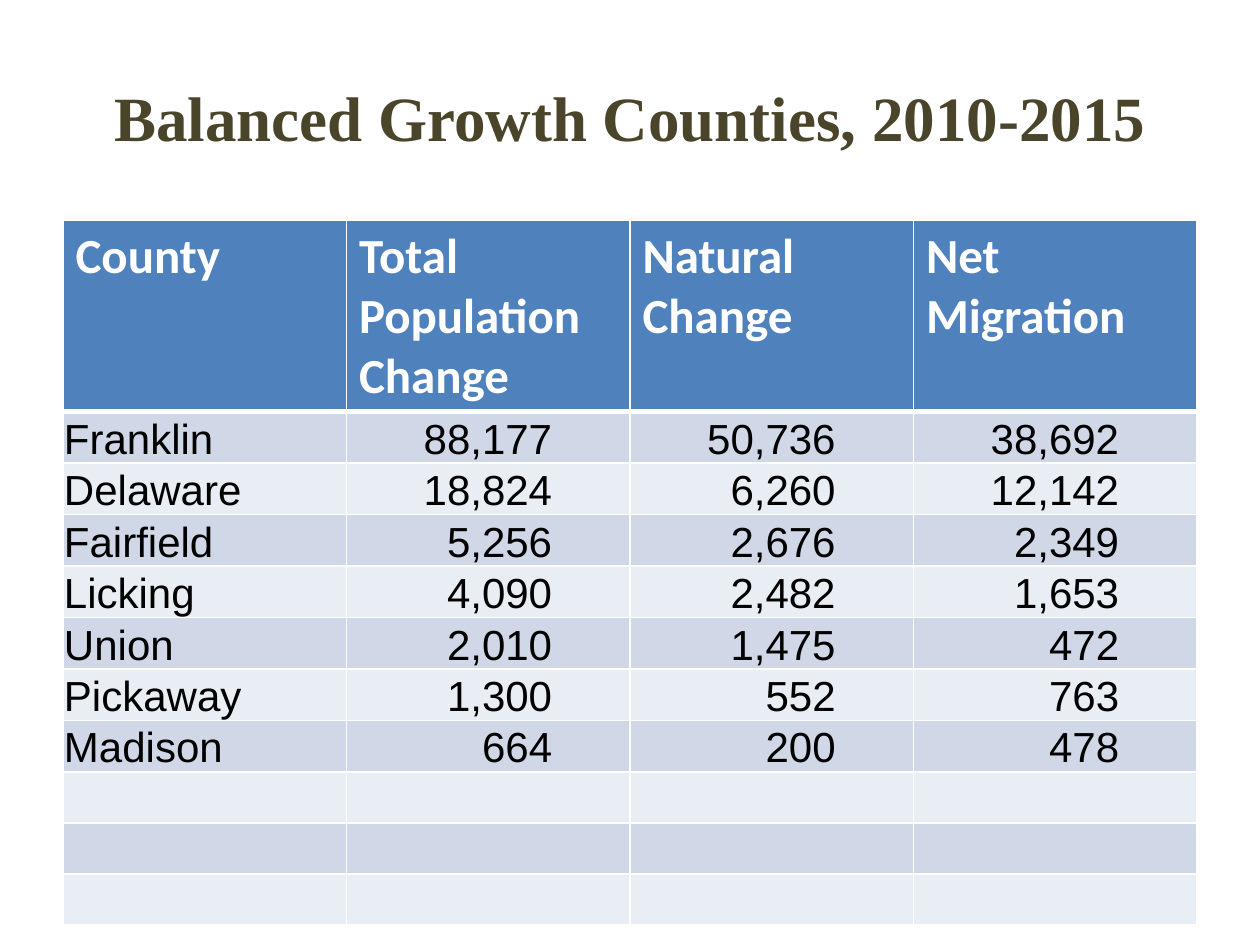
from dataclasses import dataclass

from lxml.etree import SubElement
from pptx import Presentation
from pptx.dml.color import RGBColor
from pptx.enum.text import MSO_ANCHOR as Anchor, PP_ALIGN as Align
from pptx.oxml.ns import qn
from pptx.slide import Slide
from pptx.util import Cm, Pt

WHITE = RGBColor(0xFF, 0xFF, 0xFF)
BLACK = RGBColor(0x00, 0x00, 0x00)
OLIVE = RGBColor(0x4A, 0x45, 0x2A)
BLUE = RGBColor(0x4F, 0x81, 0xBD)
BANDS = (RGBColor(0xD0, 0xD8, 0xE8), RGBColor(0xE9, 0xED, 0xF4))

HEADINGS = ("County", "Total Population Change", "Natural Change", "Net Migration")
COUNTIES = (
    ("Franklin", "88,177", "50,736", "38,692"),
    ("Delaware", "18,824", "6,260", "12,142"),
    ("Fairfield", "5,256", "2,676", "2,349"),
    ("Licking", "4,090", "2,482", "1,653"),
    ("Union", "2,010", "1,475", "472"),
    ("Pickaway", "1,300", "552", "763"),
    ("Madison", "664", "200", "478"),
)
EMPTY_ROWS = 3


@dataclass
class GrowthSlide:
    slide: Slide
    title_font: str = "Times New Roman"
    heading_font: str = "Calibri"
    body_font: str = "Arial"

    def add_text(self, paragraph, text, font, size, color, bold=False, align=Align.LEFT):
        paragraph.alignment = align
        run = paragraph.add_run()
        run.text = text
        run.font.name = font
        run.font.size = Pt(size)
        run.font.bold = bold
        run.font.color.rgb = color

    def title(self, text):
        box = self.slide.shapes.add_textbox(Cm(1.27), Cm(0.76), Cm(22.86), Cm(3.18))
        frame = box.text_frame
        frame.word_wrap = True
        frame.vertical_anchor = Anchor.MIDDLE
        self.add_text(frame.paragraphs[0], text, self.title_font, 36, OLIVE, True, Align.CENTER)

    def borders(self, cell, top=1, bottom=1):
        properties = cell._tc.get_or_add_tcPr()
        for side, width in (("L", 1), ("R", 1), ("T", top), ("B", bottom)):
            line = SubElement(properties, qn(f"a:ln{side}"), w=str(Pt(width)))
            fill = SubElement(line, qn("a:solidFill"))
            SubElement(fill, qn("a:srgbClr"), val=str(WHITE))

    def paint(self, cell, color):
        cell.fill.solid()
        cell.fill.fore_color.rgb = color

    def heading_cell(self, cell, text):
        self.borders(cell, bottom=3)
        self.paint(cell, BLUE)
        self.add_text(cell.text_frame.paragraphs[0], text, self.heading_font, 28, WHITE, True)

    def body_cell(self, cell, text, row, column):
        self.borders(cell, top=3 if row == 0 else 1)
        self.paint(cell, BANDS[row % 2])
        cell.vertical_anchor = Anchor.BOTTOM
        cell.margin_left = cell.margin_top = Cm(0.02)
        cell.margin_right = Cm(1.57) if column else Cm(0.02)
        cell.margin_bottom = Cm(0)
        if text:
            align = Align.RIGHT if column else Align.LEFT
            self.add_text(cell.text_frame.paragraphs[0], text, self.body_font, 24, BLACK, align=align)

    def table(self, headings, records):
        frame = self.slide.shapes.add_table(
            len(records) + 1, len(headings), Cm(1.27), Cm(4.45), Cm(22.86), Cm(14.15)
        )
        table = frame.table
        for index, row in enumerate(table.rows):
            row.height = Cm(1.03) if index else Cm(3.85)
        for column, heading in enumerate(headings):
            self.heading_cell(table.cell(0, column), heading)
            for row, record in enumerate(records):
                self.body_cell(table.cell(row + 1, column), record[column], row, column)


def main():
    presentation = Presentation()
    presentation.slide_width = Cm(25.4)
    presentation.slide_height = Cm(19.05)
    growth = GrowthSlide(presentation.slides.add_slide(presentation.slide_layouts[6]))
    growth.title("Balanced Growth Counties, 2010-2015")
    blank_record = ("",) * len(HEADINGS)
    growth.table(HEADINGS, COUNTIES + (blank_record,) * EMPTY_ROWS)
    presentation.save("out.pptx")


if __name__ == "__main__":
    main()
